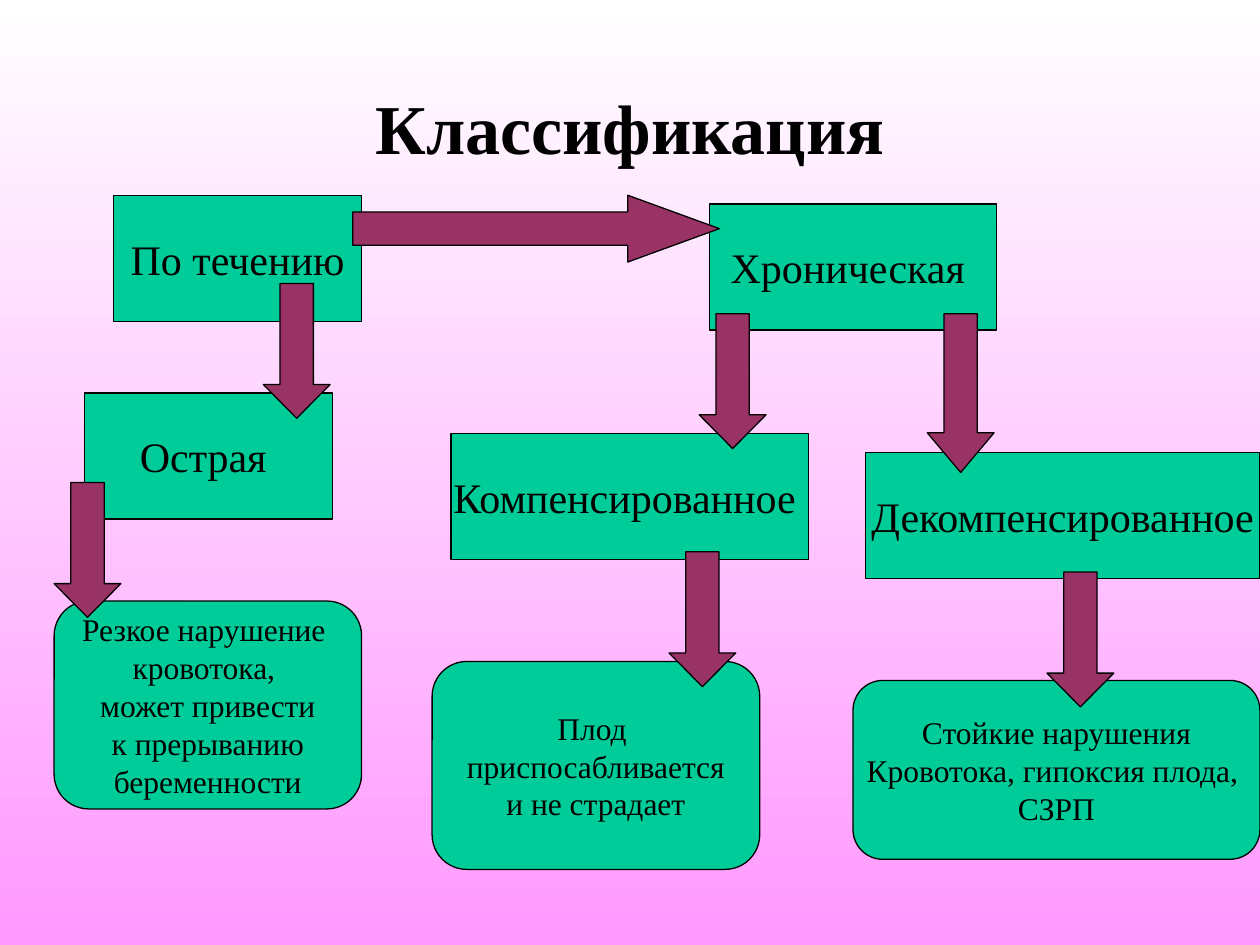
import pptx
import pptx.dml.color
import pptx.enum.shapes
import pptx.enum.text
import pptx.util

COLORS = {"box": "00CC99", "arrow": "993366", "ink": "000000",
          "sky": "FFFFFF", "ground": "FF99FF"}
FONT = "Times New Roman"
COLUMNS, ROWS = 100, 75
BOX_HEIGHT = 10
ARROW_WIDTH, ARROW_LENGTH = 5.3, 10.7
SHAPES = pptx.enum.shapes.MSO_SHAPE
ANCHOR = pptx.enum.text.MSO_ANCHOR
CENTER = pptx.enum.text.PP_ALIGN.CENTER


def color(name):
    return pptx.dml.color.RGBColor.from_string(COLORS[name])


class Diagram:
    def __init__(self, presentation):
        self.column = presentation.slide_width / COLUMNS
        self.row = presentation.slide_height / ROWS
        self.slide = presentation.slides.add_slide(presentation.slide_layouts[5])

    def place(self, left, top, width, height):
        return (round(left * self.column), round(top * self.row),
                round(width * self.column), round(height * self.row))

    def background(self):
        fill = self.slide.background.fill
        fill.gradient()
        fill.gradient_angle = 270
        for stop, name, position in zip(fill.gradient_stops, ("sky", "ground"), (0, 1)):
            stop.color.rgb = color(name)
            stop.position = position

    def add_lines(self, frame, lines, size, bold=False):
        for index, line in enumerate(lines):
            paragraph = frame.add_paragraph() if index else frame.paragraphs[0]
            paragraph.alignment = CENTER
            run = paragraph.add_run()
            run.text = line
            run.font.name = FONT
            run.font.size = pptx.util.Pt(size)
            run.font.bold = bold
            run.font.color.rgb = color("ink")

    def title(self, text, left, top, width, height):
        shape = self.slide.shapes.title
        shape.left, shape.top, shape.width, shape.height = self.place(left, top, width, height)
        frame = shape.text_frame
        frame.auto_size = pptx.enum.text.MSO_AUTO_SIZE.NONE
        frame.vertical_anchor = ANCHOR.TOP
        frame.margin_top = 0
        self.add_lines(frame, [text], 40, bold=True)

    def shape(self, kind, fill, left, top, width, height):
        shape = self.slide.shapes.add_shape(kind, *self.place(left, top, width, height))
        shape.shadow.inherit = False
        shape.fill.solid()
        shape.fill.fore_color.rgb = color(fill)
        shape.line.color.rgb = color("ink")
        shape.line.width = pptx.util.Pt(0.75)
        return shape

    def box(self, kind, lines, size, left, top, width, height):
        shape = self.shape(kind, "box", left, top, width, height)
        frame = shape.text_frame
        frame.word_wrap = False
        frame.vertical_anchor = ANCHOR.MIDDLE
        self.add_lines(frame, lines, size)

    def category(self, text, left, top, width):
        self.box(SHAPES.RECTANGLE, [text], 24, left, top, width, BOX_HEIGHT)

    def outcome(self, lines, left, top, width, height):
        self.box(SHAPES.ROUNDED_RECTANGLE, lines, 18, left, top, width, height)

    def arrow(self, kind, left, top, width, height):
        shape = self.shape(kind, "arrow", left, top, width, height)
        shape.adjustments[1] = max(width, height) / 4 / min(width, height)

    def down_arrow(self, left, top, length=ARROW_LENGTH):
        self.arrow(SHAPES.DOWN_ARROW, left, top, ARROW_WIDTH, length)

    def right_arrow(self, left, top, length):
        self.arrow(SHAPES.RIGHT_ARROW, left, top, length, ARROW_WIDTH)


def main():
    presentation = pptx.Presentation()
    presentation.slide_width = pptx.util.Inches(10)
    presentation.slide_height = pptx.util.Inches(7.5)

    diagram = Diagram(presentation)
    diagram.background()
    diagram.title("Классификация", 7.5, 6.7, 85, 12.5)

    diagram.category("По течению", 9, 15.5, 19.7)
    diagram.category("Острая ", 6.7, 31.2, 19.7)
    diagram.category("Хроническая ", 56.3, 16.2, 22.8)
    diagram.outcome(["Резкое нарушение ", "кровотока, ", "может привести",
                     "к прерыванию", "беременности"], 4.3, 47.7, 24.4, 16.5)
    diagram.category("Компенсированное ", 35.8, 34.4, 28.4)
    diagram.outcome(["Плод ", "приспосабливается", "и не страдает"],
                    34.3, 52.5, 26, 16.5)
    diagram.category("Декомпенсированное", 68.7, 35.9, 31.3)
    diagram.outcome(["Стойкие нарушения", "Кровотока, гипоксия плода, ", "СЗРП"],
                    67.7, 54, 32.3, 14.2)

    diagram.down_arrow(20.9, 22.5)
    diagram.right_arrow(28, 15.5, 29.1)
    diagram.down_arrow(55.5, 24.9)
    diagram.down_arrow(73.6, 24.9, 12.6)
    for left, top in ((4.3, 38.3), (53.1, 43.8), (83.1, 45.4)):
        diagram.down_arrow(left, top)

    presentation.save("out.pptx")


if __name__ == "__main__":
    main()
